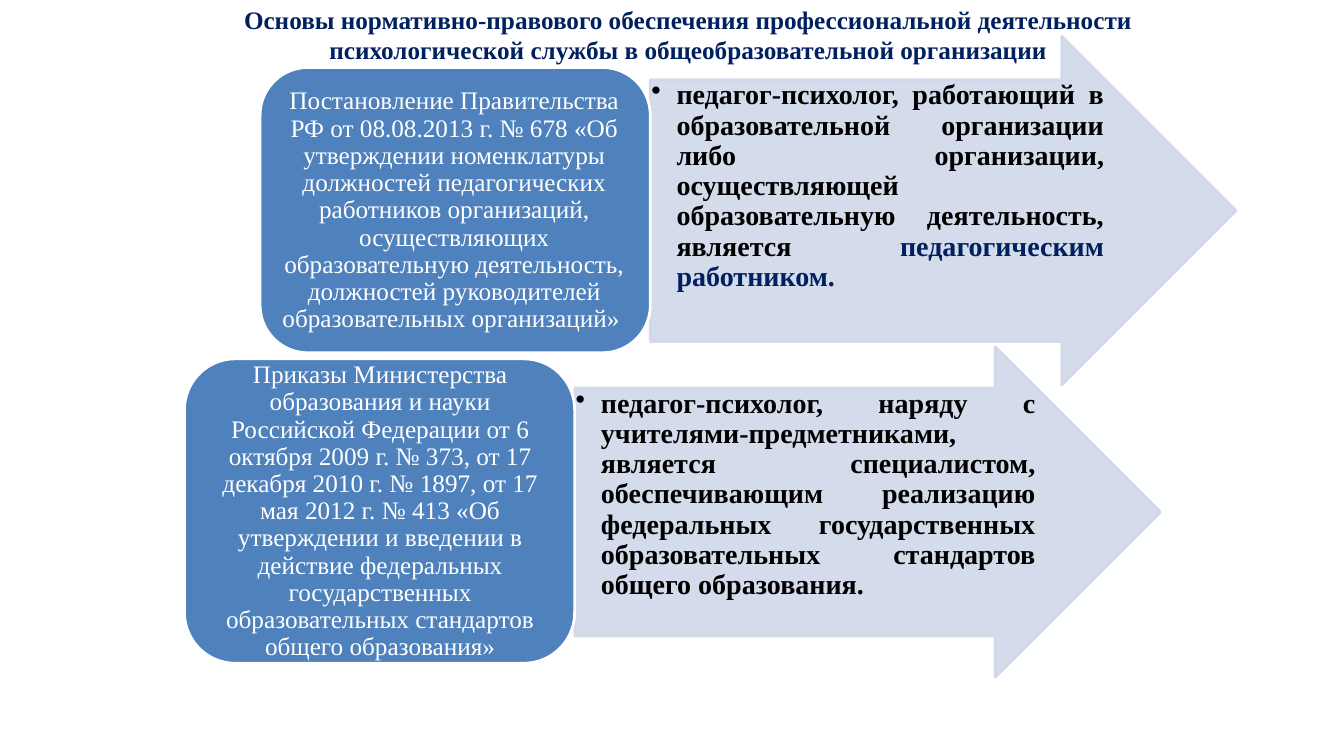
"""Build a slide of two legal acts, each pointing to what it says of the school psychologist."""
from dataclasses import dataclass

from lxml import etree
from pptx import Presentation
from pptx.dml.color import RGBColor
from pptx.enum import shapes as es, text as et
from pptx.oxml import ns
from pptx.util import Inches, Pt

FONT = "Times New Roman"
BLUE, PALE, NAVY, WHITE, BLACK = "4F81BD", "D0D8E8", "002060", "FFFFFF", "000000"
Box = tuple[float, float, float, float]
Run = tuple[str, str]


@dataclass(frozen=True)
class Style:
    size: int
    bold: bool
    align: et.PP_ALIGN
    anchor: et.MSO_ANCHOR
    inset: tuple[float, float]
    space: float = 0.9
    bullet: bool = False


@dataclass(frozen=True)
class Act:
    arrow: Box
    claim_at: Box
    claim: tuple[Run, ...]
    card: Box
    law_at: Box
    law: str


HEAD = Style(18, True, et.PP_ALIGN.CENTER, et.MSO_ANCHOR.TOP, (0.1, 0.05), 1.0)
LAW = Style(18, False, et.PP_ALIGN.CENTER, et.MSO_ANCHOR.MIDDLE, (0.07, 0.04))
CLAIM = Style(20, True, et.PP_ALIGN.JUSTIFY, et.MSO_ANCHOR.TOP, (0.01, 0.01), bullet=True)

TITLE = ("Основы нормативно-правового обеспечения профессиональной деятельности "
         "психологической службы в общеобразовательной организации")

DECREE = Act(
    (6.45, 0.36, 5.81, 3.46), (6.45, 0.79, 4.51, 2.6),
    (("педагог-психолог, работающий в образовательной организации либо организации, "
      "осуществляющей образовательную деятельность, является ", BLACK),
     ("педагогическим работником. ", NAVY)),
    (2.58, 0.67, 3.87, 2.83), (2.71, 0.81, 3.59, 2.56),
    "Постановление Правительства РФ от 08.08.2013 г. № 678 «Об утверждении номенклатуры "
    "должностей педагогических работников организаций, осуществляющих образовательную "
    "деятельность, должностей руководителей образовательных организаций» ")

ORDERS = Act(
    (5.7, 3.44, 5.81, 3.28), (5.7, 3.85, 4.58, 2.46),
    (("педагог-психолог, наряду с учителями-предметниками, является специалистом, "
      "обеспечивающим реализацию федеральных государственных образовательных стандартов "
      "общего образования. ", BLACK),),
    (1.83, 3.56, 3.87, 3.02), (1.98, 3.71, 3.58, 2.73),
    "Приказы Министерства образования и науки Российской Федерации от 6 октября 2009 г. "
    "№ 373, от 17 декабря 2010 г. № 1897, от 17 мая 2012 г. № 413 «Об утверждении и введении "
    "в действие федеральных государственных образовательных стандартов общего образования»")


def color(code: str) -> RGBColor:
    """Turn a hex string into a colour."""
    return RGBColor.from_string(code)


def apply(target, values: dict) -> None:
    """Set every named value on the target."""
    for name, value in values.items():
        setattr(target, name, value)


def draw(parent, kind: es.MSO_SHAPE, at: Box, fill: str, edge: str):
    """Add a flat filled shape with a two-point outline."""
    shape = parent.add_shape(kind, *map(Inches, at))
    shape.shadow.inherit = False
    shape.fill.solid()
    shape.fill.fore_color.rgb = color(fill)
    shape.line.color.rgb = color(edge)
    shape.line.width = Pt(2)
    return shape


def fade(shape, alpha: int) -> None:
    """Give the fill and outline an opacity in percent."""
    for node in shape.element.spPr.iter(ns.qn("a:srgbClr")):
        etree.SubElement(node, ns.qn("a:alpha")).set("val", str(alpha * 1000))


def mark(para) -> None:
    """Give the paragraph a round bullet with a hanging indent."""
    props = para._p.get_or_add_pPr()
    props.set("marL", str(Inches(0.25)))
    props.set("indent", str(Inches(-0.25)))
    etree.SubElement(props, ns.qn("a:buChar")).set("char", "•")


def write(parent, at: Box, runs: tuple[Run, ...], style: Style) -> None:
    """Add a wrapped text box holding one paragraph."""
    frame = parent.add_textbox(*map(Inches, at)).text_frame
    side, end = map(Inches, style.inset)
    apply(frame, {"word_wrap": True, "vertical_anchor": style.anchor,
                  "margin_left": side, "margin_right": side,
                  "margin_top": end, "margin_bottom": end})
    para = frame.paragraphs[0]
    if style.bullet:
        mark(para)
    apply(para, {"alignment": style.align, "line_spacing": style.space})
    for words, shade in runs:
        run = para.add_run()
        run.text = words
        apply(run.font, {"name": FONT, "size": Pt(style.size), "bold": style.bold})
        run.font.color.rgb = color(shade)


def show(slide, act: Act) -> None:
    """Draw one act as a card with an arrow beside it."""
    group = slide.shapes.add_group_shape().shapes
    arrow = draw(group, es.MSO_SHAPE.RIGHT_ARROW, act.arrow, PALE, PALE)
    arrow.adjustments[0] = 0.75
    arrow.adjustments[1] = 0.5
    fade(arrow, 90)
    write(group, act.claim_at, act.claim, CLAIM)
    draw(group, es.MSO_SHAPE.ROUNDED_RECTANGLE, act.card, BLUE, WHITE)
    write(group, act.law_at, ((act.law, WHITE),), LAW)


def main() -> None:
    """Build and save the slide."""
    deck = Presentation()
    apply(deck, {"slide_width": Inches(13.33), "slide_height": Inches(7.5)})
    slide = deck.slides.add_slide(deck.slide_layouts[6])
    show(slide, DECREE)
    write(slide.shapes, (2.26, -0.01, 9.13, 0.71), ((TITLE, NAVY),), HEAD)
    show(slide, ORDERS)
    deck.save("out.pptx")


if __name__ == "__main__":
    main()
